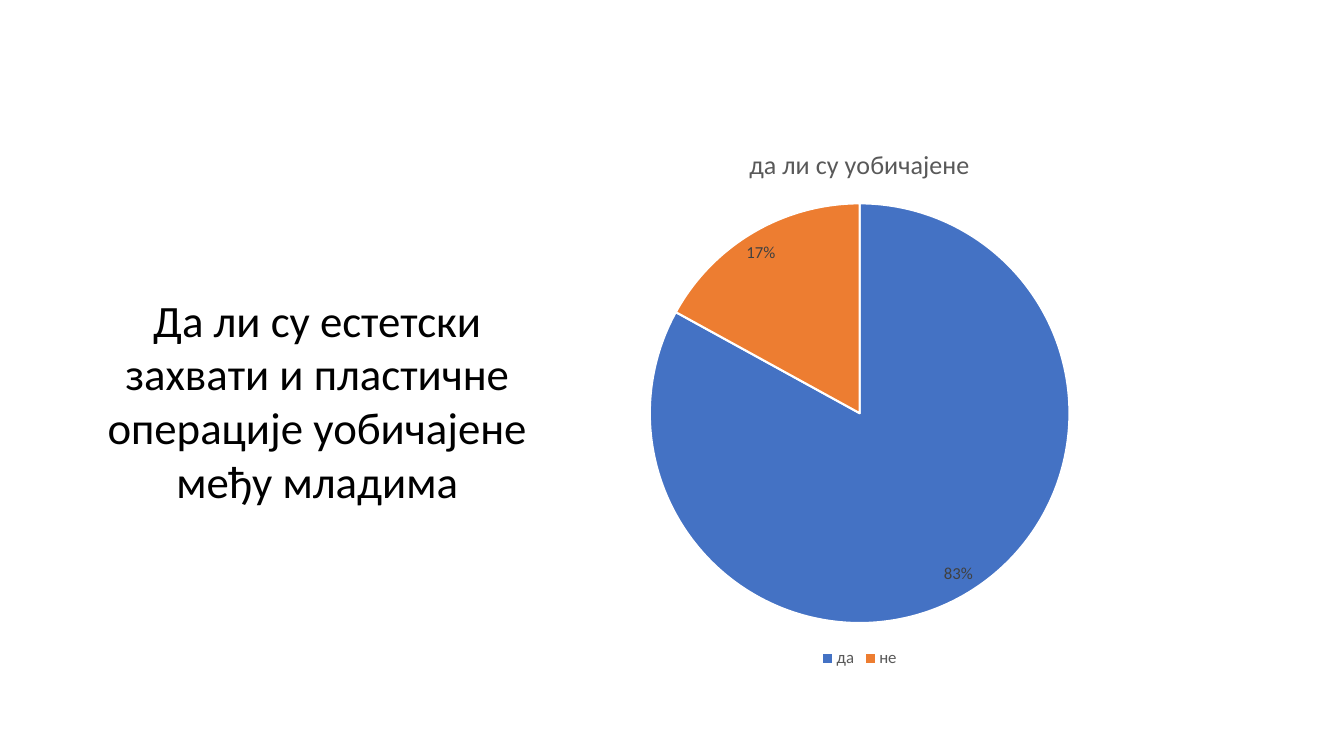
from pptx import Presentation
from pptx import util as u
from pptx.chart.data import CategoryChartData
from pptx.dml.color import RGBColor
from pptx.enum import chart as ch, text

FONT = "Calibri"
SLICES = {"да": (0.83, "4472C4"), "не": (0.17, "ED7D31")}


def rgb(value):
    return RGBColor.from_string(value)


def set_all(obj, values):
    for name, value in values.items():
        setattr(obj, name, value)


def set_font(font, size, color):
    set_all(font, {"name": FONT, "size": u.Pt(size), "bold": False})
    font.color.rgb = rgb(color)


def add_question(s, wording, left, top, width, height):
    sp = s.shapes.title
    set_all(sp, {"left": u.Cm(left), "top": u.Cm(top),
                 "width": u.Cm(width), "height": u.Cm(height)})
    tf = sp.text_frame
    set_all(tf, {"word_wrap": True, "auto_size": text.MSO_AUTO_SIZE.NONE,
                 "vertical_anchor": text.MSO_ANCHOR.TOP})
    p = tf.paragraphs[0]
    p.alignment = text.PP_ALIGN.CENTER
    r = p.add_run()
    r.text = wording
    set_font(r.font, 32, "000000")


def add_pie(s, title, slices, left, top, width, height):
    data = CategoryChartData(number_format="0%")
    data.categories = list(slices)
    data.add_series(title, [share for share, _ in slices.values()])
    chart = s.shapes.add_chart(ch.XL_CHART_TYPE.PIE, u.Cm(left), u.Cm(top),
                               u.Cm(width), u.Cm(height), data).chart
    set_font(chart.font, 10, "000000")

    chart.has_title = True
    chart.chart_title.include_in_layout = False
    p = chart.chart_title.text_frame.paragraphs[0]
    r = p.add_run()
    r.text = title
    set_font(r.font, 18.6, "595959")

    chart.has_legend = True
    set_all(chart.legend, {"position": ch.XL_LEGEND_POSITION.BOTTOM,
                           "include_in_layout": False})
    set_font(chart.legend.font, 12, "595959")

    plot = chart.plots[0]
    plot.vary_by_categories = True
    series = plot.series[0]
    for i, (_, color) in enumerate(slices.values()):
        fmt = series.points[i].format
        fmt.fill.solid()
        fmt.fill.fore_color.rgb = rgb(color)
        fmt.line.width = u.Pt(1.5)
        fmt.line.color.rgb = rgb("FFFFFF")

    labels = series.data_labels
    set_all(labels, {"show_value": True, "show_percentage": False,
                     "number_format": "0%", "number_format_is_linked": False,
                     "position": ch.XL_LABEL_POSITION.BEST_FIT})
    set_font(labels.font, 12, "404040")


def main():
    prs = Presentation()
    set_all(prs, {"slide_width": u.Cm(33.87), "slide_height": u.Cm(19.05)})
    s = prs.slides.add_slide(prs.slide_layouts[5])
    add_pie(s, "да ли су уобичајене", SLICES, 11.71, 3.15, 19.91, 13.79)
    add_question(s, "Да ли су естетски захвати и пластичне операције "
                 "уобичајене међу младима", 2.31, 7.24, 11.38, 5.74)
    prs.save("out.pptx")


if __name__ == "__main__":
    main()
